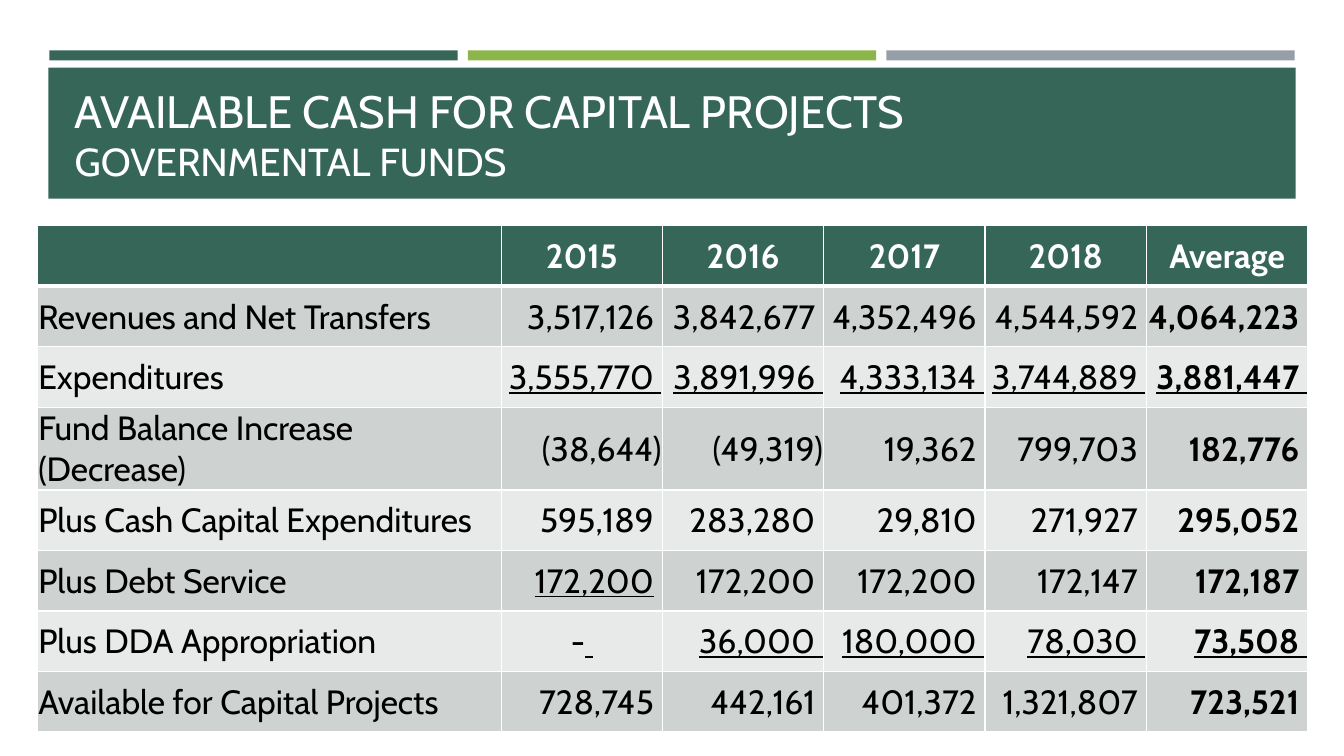
"""Build the slide on available cash for capital projects."""
from dataclasses import dataclass

import lxml.etree
import pptx
import pptx.dml.color
import pptx.enum.shapes
import pptx.enum.text
import pptx.oxml.ns
import pptx.util

Inches = pptx.util.Inches
Align = pptx.enum.text.PP_ALIGN
Anchor = pptx.enum.text.MSO_ANCHOR

FONT = "Cabin"
COLOURS = {
    "green": "366658",
    "lime": "8CB64A",
    "grey": "969FA7",
    "white": "FFFFFF",
    "black": "000000",
    "dark band": "CED3D1",
    "light band": "E8EAEA",
}


@dataclass(frozen=True)
class Bar:
    """A filled rectangle, in inches."""

    left: float
    top: float
    width: float
    height: float
    colour: str


@dataclass(frozen=True)
class FundRow:
    """A label and its amounts; underscores enclose underlined text."""

    label: str
    amounts: tuple[str, ...]


BARS = (
    Bar(0.49, 0.5, 4.05, 0.1, "green"),
    Bar(4.64, 0.5, 4.05, 0.1, "lime"),
    Bar(8.79, 0.5, 4.05, 0.1, "grey"),
    Bar(0.48, 0.67, 12.37, 1.3, "green"),
)
TITLE_LINES = (("AVAILABLE CASH FOR CAPITAL PROJECTS", 32.4), ("GOVERNMENTAL FUNDS", 27.9))
COLUMN_WIDTHS = (4.6,) + (1.6,) * 5
ROW_HEIGHT = 0.6
FUND_ROWS = (
    FundRow("", ("2015", "2016", "2017", "2018", "Average")),
    FundRow("Revenues and Net Transfers",
            ("3,517,126 ", "3,842,677 ", "4,352,496 ", "4,544,592 ", "4,064,223 ")),
    FundRow("Expenditures",
            ("_3,555,770 _", "_3,891,996 _", "_4,333,134 _", "_3,744,889 _", "_3,881,447 _")),
    FundRow("Fund Balance Increase (Decrease)",
            ("(38,644)", "(49,319)", "19,362 ", "799,703 ", "182,776 ")),
    FundRow("Plus Cash Capital Expenditures",
            ("595,189 ", "283,280 ", "29,810 ", "271,927 ", "295,052 ")),
    FundRow("Plus Debt Service",
            ("_172,200_ ", "172,200 ", "172,200 ", "172,147 ", "172,187 ")),
    FundRow("Plus DDA Appropriation",
            ("-_ _", "_36,000 _", "_180,000 _", "_78,030 _", "_73,508 _")),
    FundRow("Available for Capital Projects",
            ("728,745 ", "442,161 ", "401,372 ", "1,321,807 ", "723,521 ")),
)


def rgb(name: str) -> pptx.dml.color.RGBColor:
    """Return the named colour."""
    return pptx.dml.color.RGBColor.from_string(COLOURS[name])


def add_run(paragraph, text: str, size: float, colour: str,
            bold: bool = False, underline: bool = False) -> None:
    """Add one formatted run."""
    run = paragraph.add_run()
    run.text = text
    run.font.name = FONT
    run.font.size = pptx.util.Pt(size)
    run.font.color.rgb = rgb(colour)
    run.font.bold = bold
    run.font.underline = underline


def add_bar(slide, bar: Bar) -> None:
    """Draw one rectangle without an outline."""
    shape = slide.shapes.add_shape(
        pptx.enum.shapes.MSO_SHAPE.RECTANGLE,
        Inches(bar.left), Inches(bar.top), Inches(bar.width), Inches(bar.height))
    shape.shadow.inherit = False
    shape.fill.solid()
    shape.fill.fore_color.rgb = rgb(bar.colour)
    shape.line.fill.background()


def set_title(slide) -> None:
    """Place the title in front of its banner and fill in both lines."""
    title = slide.shapes.title
    title.left, title.top = Inches(0.64), Inches(0.77)
    title.width, title.height = Inches(12.06), Inches(1.11)
    slide.shapes._spTree.append(title._element)
    frame = title.text_frame
    frame.word_wrap = True
    frame.auto_size = pptx.enum.text.MSO_AUTO_SIZE.NONE
    frame.vertical_anchor = Anchor.BOTTOM
    paragraph = frame.paragraphs[0]
    paragraph.alignment = Align.LEFT
    for index, (text, size) in enumerate(TITLE_LINES):
        if index:
            paragraph.add_line_break()
        add_run(paragraph, text, size, "white")


def set_borders(cell, bottom_width: float) -> None:
    """Give a cell white borders."""
    properties = cell._tc.get_or_add_tcPr()
    qn = pptx.oxml.ns.qn
    for side in ("L", "R", "T", "B"):
        width = bottom_width if side == "B" else 1
        line = lxml.etree.SubElement(
            properties, qn(f"a:ln{side}"), w=str(pptx.util.Pt(width)))
        fill = lxml.etree.SubElement(line, qn("a:solidFill"))
        lxml.etree.SubElement(fill, qn("a:srgbClr"), val=COLOURS["white"])


def fill_cell(cell, text: str, row: int, column: int) -> None:
    """Format a cell by its place in the table and write its text."""
    header = row == 0
    set_borders(cell, 3 if header else 1)
    cell.fill.solid()
    band = "dark band" if row % 2 else "light band"
    cell.fill.fore_color.rgb = rgb("green" if header else band)
    cell.margin_left = cell.margin_right = cell.margin_top = Inches(0.01)
    cell.margin_bottom = 0
    cell.vertical_anchor = Anchor.MIDDLE
    paragraph = cell.text_frame.paragraphs[0]
    if header or text.startswith("-"):
        paragraph.alignment = Align.CENTER
    else:
        paragraph.alignment = Align.RIGHT if column else Align.LEFT
    bold = header or column == len(COLUMN_WIDTHS) - 1
    for index, part in enumerate(text.split("_")):
        if part:
            add_run(paragraph, part, 24, "white" if header else "black",
                    bold, underline=index % 2 == 1)


def add_fund_table(slide) -> None:
    """Draw the table of yearly amounts."""
    table = slide.shapes.add_table(
        len(FUND_ROWS), len(COLUMN_WIDTHS), Inches(0.37), Inches(2.24),
        Inches(sum(COLUMN_WIDTHS)), Inches(ROW_HEIGHT * len(FUND_ROWS))).table
    for column, width in zip(table.columns, COLUMN_WIDTHS):
        column.width = Inches(width)
    for row, fund_row in enumerate(FUND_ROWS):
        table.rows[row].height = Inches(ROW_HEIGHT)
        for column, text in enumerate((fund_row.label, *fund_row.amounts)):
            fill_cell(table.cell(row, column), text, row, column)


def main() -> None:
    """Build and save the presentation."""
    presentation = pptx.Presentation()
    presentation.slide_width = Inches(13.33)
    presentation.slide_height = Inches(7.5)
    slide = presentation.slides.add_slide(presentation.slide_layouts[5])
    for bar in BARS:
        add_bar(slide, bar)
    set_title(slide)
    add_fund_table(slide)
    presentation.save("out.pptx")


if __name__ == "__main__":
    main()
